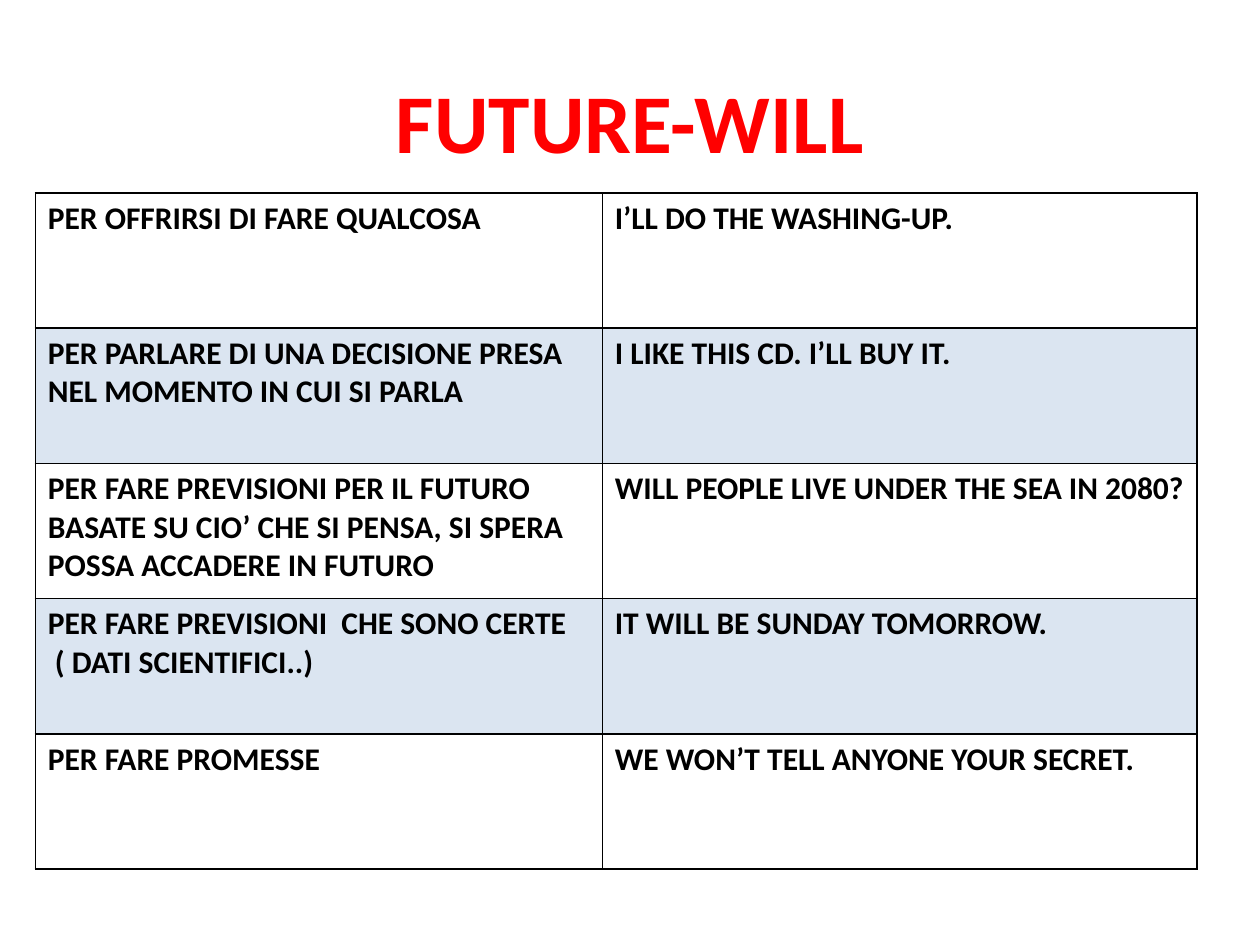
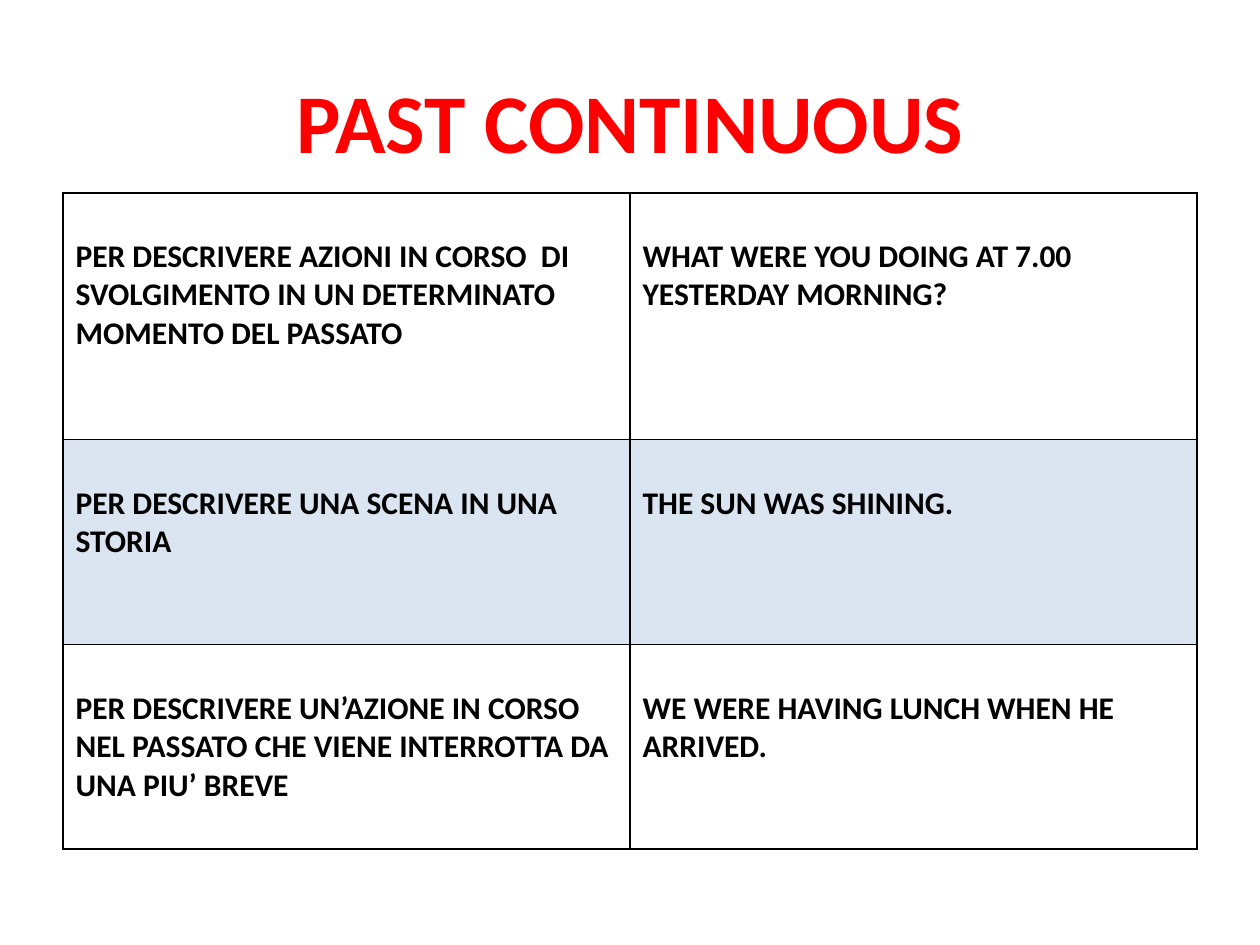
import pptx
import pptx.util
import pptx.dml.color
import pptx.enum.text
import pptx.oxml.ns
import lxml.etree

COLUMNS, ROWS = 100, 75
TITLE_ONLY = 5

WILL_USES = [
    ("PER OFFRIRSI DI FARE QUALCOSA", "I’LL DO THE WASHING-UP."),
    ("PER PARLARE DI UNA DECISIONE PRESA NEL MOMENTO IN CUI SI PARLA",
     "I LIKE THIS CD. I’LL BUY IT."),
    ("PER FARE PREVISIONI PER IL FUTURO BASATE SU CIO’ CHE SI PENSA, "
     "SI SPERA POSSA ACCADERE IN FUTURO",
     "WILL PEOPLE LIVE UNDER THE SEA IN 2080?"),
    ("PER FARE PREVISIONI  CHE SONO CERTE\n ( DATI SCIENTIFICI..)",
     "IT WILL BE SUNDAY TOMORROW."),
    ("PER FARE PROMESSE", "WE WON’T TELL ANYONE YOUR SECRET."),
]

PAST_CONTINUOUS_USES = [
    ("PER DESCRIVERE AZIONI IN CORSO  DI SVOLGIMENTO IN UN DETERMINATO "
     "MOMENTO DEL PASSATO",
     "WHAT WERE YOU DOING AT 7.00 YESTERDAY MORNING?"),
    ("PER DESCRIVERE UNA SCENA IN UNA STORIA", "THE SUN WAS SHINING."),
    ("PER DESCRIVERE UN’AZIONE IN CORSO NEL PASSATO CHE VIENE INTERROTTA "
     "DA UNA PIU’ BREVE",
     "WE WERE HAVING LUNCH WHEN HE ARRIVED."),
]


def rgb(value):
    return pptx.dml.color.RGBColor.from_string(value)


class Deck:
    FONT = "Calibri"
    TITLE_COLOR, TEXT_COLOR, BORDER, BAND = "FF0000", "000000", "000000", "4F81BD"
    BAND_OPACITY = 20
    TITLE_SIZE, CELL_SIZE = 47.7, 18
    TABLE_TOP = 15.3

    def __init__(self):
        self.prs = pptx.Presentation()
        self.prs.slide_width = pptx.util.Inches(10)
        self.prs.slide_height = pptx.util.Inches(7.5)
        self.s = None

    def x(self, columns):
        return round(self.prs.slide_width * columns / COLUMNS)

    def y(self, rows):
        return round(self.prs.slide_height * rows / ROWS)

    def format_text(self, tf, size, color, align):
        for p in tf.paragraphs:
            p.alignment = align
            for r in p.runs:
                r.font.name = self.FONT
                r.font.size = pptx.util.Pt(size)
                r.font.bold = True
                r.font.color.rgb = rgb(color)

    def slide(self, title):
        self.s = self.prs.slides.add_slide(self.prs.slide_layouts[TITLE_ONLY])
        sp = self.s.shapes.title
        sp.left, sp.top = self.x(5), self.y(6)
        sp.width, sp.height = self.x(90), self.y(12.5)
        tf = sp.text_frame
        tf.text = title
        tf.auto_size = pptx.enum.text.MSO_AUTO_SIZE.NONE
        tf.vertical_anchor = pptx.enum.text.MSO_ANCHOR.MIDDLE
        tf.margin_top, tf.margin_bottom = 0, self.y(5.5)
        self.format_text(tf, self.TITLE_SIZE, self.TITLE_COLOR,
                         pptx.enum.text.PP_ALIGN.CENTER)

    def borders(self, cell):
        qn = pptx.oxml.ns.qn
        tc_pr = cell._tc.get_or_add_tcPr()
        for side in ("a:lnL", "a:lnR", "a:lnT", "a:lnB"):
            ln = lxml.etree.SubElement(tc_pr, qn(side), w=str(pptx.util.Pt(1)))
            fill = lxml.etree.SubElement(ln, qn("a:solidFill"))
            lxml.etree.SubElement(fill, qn("a:srgbClr"), val=self.BORDER)

    def band(self, cell):
        qn = pptx.oxml.ns.qn
        cell.fill.solid()
        cell.fill.fore_color.rgb = rgb(self.BAND)
        color = cell._tc.tcPr.find(qn("a:solidFill")).find(qn("a:srgbClr"))
        lxml.etree.SubElement(color, qn("a:alpha"),
                              val=str(self.BAND_OPACITY * 1000))

    def cell(self, cell, text, banded, margin_top):
        self.borders(cell)
        if banded:
            self.band(cell)
        else:
            cell.fill.background()
        cell.margin_top = self.y(margin_top)
        cell.text_frame.text = text
        self.format_text(cell.text_frame, self.CELL_SIZE, self.TEXT_COLOR,
                         pptx.enum.text.PP_ALIGN.LEFT)

    def table(self, uses, left, widths, heights, margin_top=0.5):
        table = self.s.shapes.add_table(
            len(uses), len(widths), self.x(left), self.y(self.TABLE_TOP),
            self.x(sum(widths)), self.y(sum(heights))).table
        table.first_row = table.horz_banding = False
        for column, width in zip(table.columns, widths):
            column.width = self.x(width)
        for i, (row, height, texts) in enumerate(zip(table.rows, heights, uses)):
            row.height = self.y(height)
            for cell, text in zip(row.cells, texts):
                self.cell(cell, text, i % 2 == 1, margin_top)


def main():
    deck = Deck()
    deck.slide("FUTURE-WILL")
    deck.table(WILL_USES, 2.8, [45, 47.2], [10.74] * 5)
    deck.slide("PAST CONTINUOUS")
    deck.table(PAST_CONTINUOUS_USES, 5, [45, 45], [19.6, 16.25, 16.25],
               margin_top=3.55)
    deck.prs.save("out.pptx")


if __name__ == "__main__":
    main()
